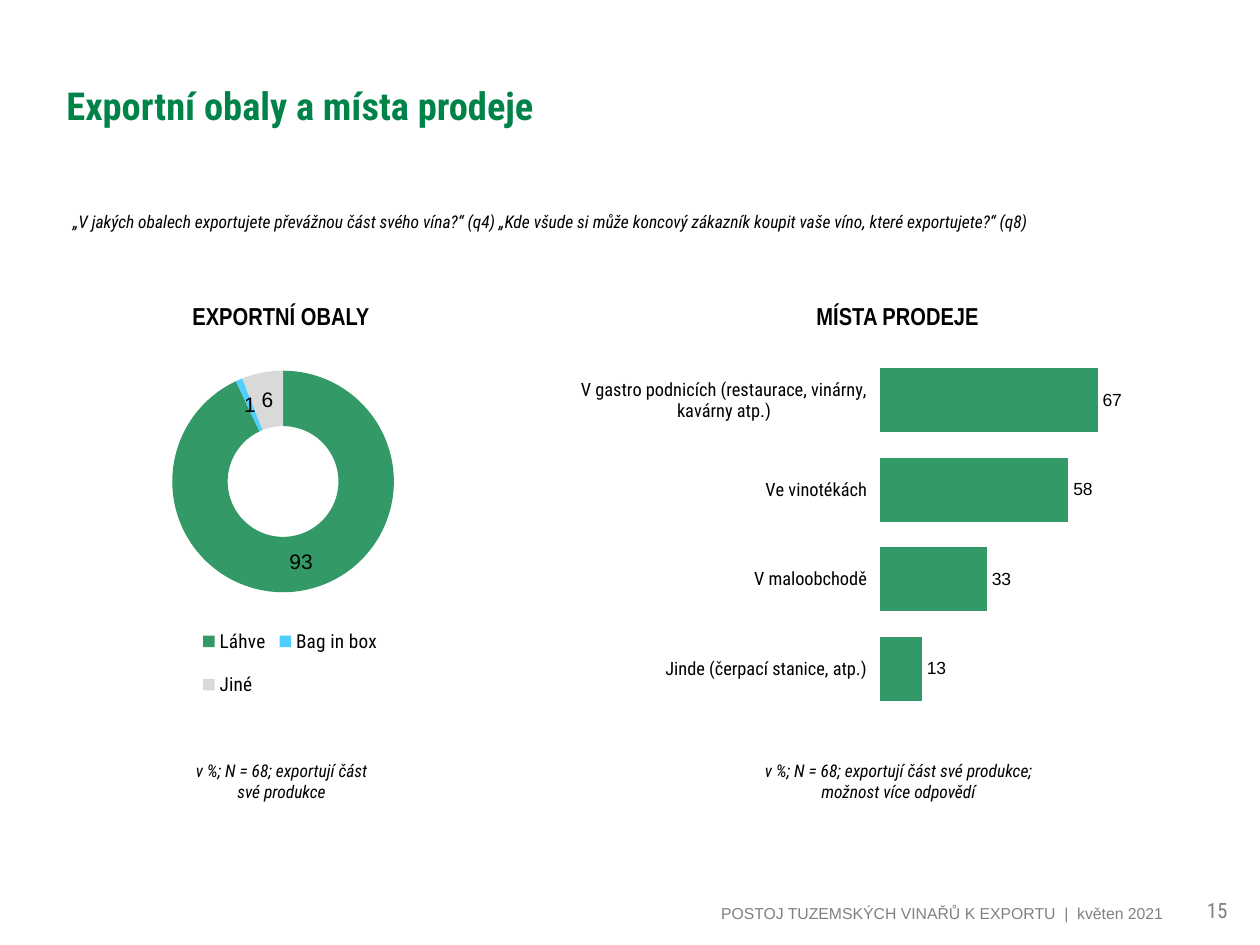
from lxml.etree import SubElement
from pptx import Presentation
from pptx.chart.data import CategoryChartData
from pptx.dml.color import RGBColor
from pptx.enum.chart import XL_CHART_TYPE, XL_LABEL_POSITION, XL_LEGEND_POSITION, XL_TICK_MARK
from pptx.enum.text import MSO_ANCHOR, PP_ALIGN
from pptx.oxml import parse_xml
from pptx.oxml.ns import nsdecls, qn
from pptx.util import Cm, Pt

BLACK = RGBColor(0x00, 0x00, 0x00)
GREY = RGBColor(0x80, 0x80, 0x80)
TITLE_GREEN = RGBColor(0x00, 0x83, 0x48)
GREEN = RGBColor(0x33, 0x99, 0x66)
BLUE = RGBColor(0x4F, 0xCE, 0xFF)
LIGHT_GREY = RGBColor(0xD9, 0xD9, 0xD9)
BODY_FONT = "Roboto Condensed"


def style_font(font, size, color=BLACK, name=BODY_FONT, bold=False, italic=False):
    font.size = Pt(size)
    font.name = name
    font.bold = bold
    font.italic = italic
    font.color.rgb = color


def add_text(slide, box, text, size, align=PP_ALIGN.LEFT, anchor=MSO_ANCHOR.TOP,
             wrap=True, line_spacing=None, **font_style):
    frame = slide.shapes.add_textbox(*map(Cm, box)).text_frame
    frame.word_wrap = wrap
    frame.vertical_anchor = anchor
    paragraph = frame.paragraphs[0]
    paragraph.text = text
    paragraph.alignment = align
    paragraph.line_spacing = line_spacing
    style_font(paragraph.font, size, **font_style)


def add_heading(slide, box, text):
    add_text(slide, box, text, 14, wrap=False, name="Arial Narrow", bold=True)


def add_note(slide, box, text):
    add_text(slide, box, text, 10, align=PP_ALIGN.CENTER, italic=True)


def manual_layout(fractions, inner=False):
    layout = parse_xml(f"<c:layout {nsdecls('c')}><c:manualLayout/></c:layout>")
    settings = [("layoutTarget", "inner")] if inner else []
    settings += [("xMode", "edge"), ("yMode", "edge"), *zip("xywh", fractions)]
    for tag, value in settings:
        SubElement(layout[0], qn(f"c:{tag}")).set("val", str(value))
    return layout


def add_chart(slide, box, kind, shares, plot_fractions):
    data = CategoryChartData(number_format="0")
    data.categories = list(shares)
    data.add_series("Series 1", list(shares.values()))
    chart = slide.shapes.add_chart(kind, *map(Cm, box), data).chart
    chart.has_title = False
    chart.has_legend = False
    style_font(chart.font, 10, name="Arial")
    plot_area = chart.plots[0]._element.getparent()
    for layout in plot_area.findall(qn("c:layout")):
        plot_area.remove(layout)
    plot_area.insert(0, manual_layout(plot_fractions, inner=True))
    return chart


def show_values(plot, size):
    plot.has_data_labels = True
    labels = plot.data_labels
    labels.show_value = True
    labels.show_percentage = False
    labels.number_format = "0"
    labels.number_format_is_linked = False
    style_font(labels.font, size, name="Arial")
    return labels


def place_legend(chart, fractions):
    chart.has_legend = True
    legend = chart.legend
    legend.position = XL_LEGEND_POSITION.RIGHT
    legend.include_in_layout = False
    style_font(legend.font, 11)
    element = legend._element
    for layout in element.findall(qn("c:layout")):
        element.remove(layout)
    element.find(qn("c:legendPos")).addnext(manual_layout(fractions))


def add_packaging(slide, left, top):
    shares = {"Láhve": 93, "Bag in box": 1, "Jiné": 6}
    chart = add_chart(slide, (left, top, 18.16, 11.84), XL_CHART_TYPE.DOUGHNUT,
                      shares, (0.134, 0.142, 0.246, 0.378))
    plot = chart.plots[0]
    plot.vary_by_categories = True
    for index, color in enumerate((GREEN, BLUE, LIGHT_GREY)):
        slice_format = plot.series[0].points[index].format
        slice_format.fill.solid()
        slice_format.fill.fore_color.rgb = color
        slice_format.line.fill.background()
    show_values(plot, 12)
    place_legend(chart, (0.16, 0.55, 0.21, 0.18))
    add_heading(slide, (left + 2.59, top + 0.15, 4.09, 0.86), "EXPORTNÍ OBALY")
    add_note(slide, (left + 2.54, top + 9.4, 4.19, 1.12),
             "v %; N = 68; exportují část své produkce")


def add_sale_places(slide, left, top):
    shares = {
        "V gastro podnicích (restaurace, vinárny, kavárny atp.)": 67,
        "Ve vinotékách": 58,
        "V maloobchodě": 33,
        "Jinde (čerpací stanice, atp.)": 13,
    }
    add_heading(slide, (left + 4.5, top, 3.81, 0.86), "MÍSTA PRODEJE")
    chart = add_chart(slide, (left, top + 0.84, 11.89, 8.41), XL_CHART_TYPE.BAR_CLUSTERED,
                      shares, (0.506, 0.046, 0.442, 0.858))
    plot = chart.plots[0]
    plot.vary_by_categories = False
    plot.gap_width = 40
    bars = plot.series[0].format
    bars.fill.solid()
    bars.fill.fore_color.rgb = GREEN
    show_values(plot, 10).position = XL_LABEL_POSITION.OUTSIDE_END

    places = chart.category_axis
    places.reverse_order = True
    places.major_tick_mark = XL_TICK_MARK.OUTSIDE
    places.format.line.fill.background()
    style_font(places.tick_labels.font, 10.5)
    percent = chart.value_axis
    percent.minimum_scale = 0
    percent.maximum_scale = 80
    percent.major_unit = 20
    percent.has_major_gridlines = False
    percent.visible = False
    add_note(slide, (left + 3.02, top + 9.25, 6.76, 1.12),
             "v %; N = 68; exportují část své produkce; možnost více odpovědí")


def add_header(slide, left, top):
    add_text(slide, (left, top, 18.21, 3.18), "Exportní obaly a místa prodeje", 22,
             anchor=MSO_ANCHOR.MIDDLE, color=TITLE_GREEN, bold=True)
    add_text(slide, (left + 0.13, top + 3.64, 23.6, 0.64),
             "„V jakých obalech exportujete převážnou část svého vína?“ (q4) "
             "„Kde všude si může koncový zákazník koupit vaše víno, které exportujete?“ (q8)",
             10, line_spacing=0.9, italic=True)


def add_footer(slide, left, top):
    add_text(slide, (left, top, 22.45, 0.99),
             "POSTOJ TUZEMSKÝCH VINAŘŮ K EXPORTU  |  květen 2021", 9,
             align=PP_ALIGN.RIGHT, anchor=MSO_ANCHOR.BOTTOM, color=GREY, name="Arial")
    add_text(slide, (left + 22.45, top, 1.7, 0.99), "15", 12,
             align=PP_ALIGN.CENTER, anchor=MSO_ANCHOR.BOTTOM, color=GREY)


def main():
    presentation = Presentation()
    presentation.slide_width = Cm(25.4)
    presentation.slide_height = Cm(19.05)
    slide = presentation.slides.add_slide(presentation.slide_layouts[6])
    add_footer(slide, 1.24, 17.73)
    add_packaging(slide, 1.04, 5.79)
    add_header(slide, 1.09, 0.53)
    add_sale_places(slide, 11.71, 5.94)
    presentation.save("out.pptx")


if __name__ == "__main__":
    main()
